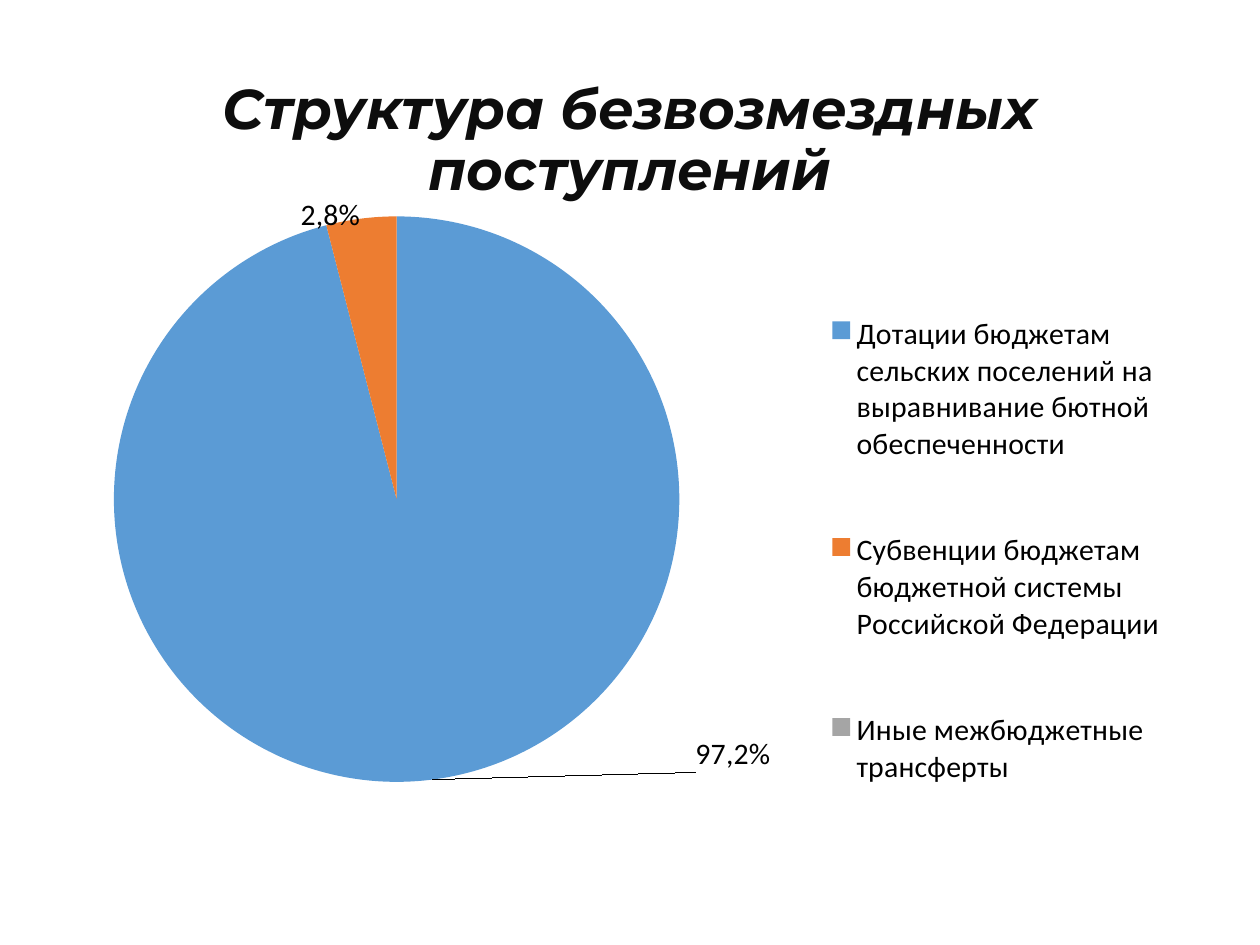
from lxml import etree
from pptx import Presentation
from pptx.chart.data import CategoryChartData
from pptx.dml.color import RGBColor
from pptx.enum.chart import XL_CHART_TYPE, XL_LABEL_POSITION, XL_LEGEND_POSITION
from pptx.enum.text import MSO_ANCHOR, PP_ALIGN
from pptx.oxml.ns import qn
from pptx.util import Inches, Pt

TITLE = "Структура безвозмездных поступлений"
# category, value, colour, label, label shift as shares of the chart
SLICES = [
    ("Дотации бюджетам сельских поселений на выравнивание бютной обеспеченности",
     96, "5B9BD5", "97,2%", (0.23, -0.07)),
    ("Субвенции бюджетам бюджетной системы Российской Федерации",
     4, "ED7D31", "2,8%", (0, 0.03)),
    ("Иные межбюджетные трансферты", 0, "A5A5A5", None, None),
]
CHART_WIDTH, CHART_HEIGHT = 9.06, 5.83
CHART_FONT_SIZE = 17
PIE_SIZE = 4.5
PIE_CENTRE = (0.3, 0.46)


def colour(hex_string):
    return RGBColor.from_string(hex_string)


def manual_layout(**settings):
    """Return a c:layout element holding the settings in the given order."""
    layout = etree.Element(qn("c:layout"))
    manual = etree.SubElement(layout, qn("c:manualLayout"))
    for name, value in settings.items():
        etree.SubElement(manual, qn(f"c:{name}")).set("val", str(value))
    return layout


def place(element, layout, index):
    for old in element.findall(qn("c:layout")):
        element.remove(old)
    element.insert(index, layout)


def add_title(slide):
    box = slide.shapes.add_textbox(Inches(0.69), Inches(0.4), Inches(8.62), Inches(1.45))
    frame = box.text_frame
    frame.word_wrap = True
    frame.vertical_anchor = MSO_ANCHOR.MIDDLE
    para = frame.paragraphs[0]
    para.alignment = PP_ALIGN.CENTER
    para.line_spacing = 0.9
    span = para.add_run()
    span.text = TITLE
    span.font.name = "Montserrat"
    span.font.size = Pt(32)
    span.font.bold = span.font.italic = True
    span.font.color.rgb = colour("0D0D0D")


def style_chart_font(font):
    font.name = "Calibri"
    font.size = Pt(CHART_FONT_SIZE)
    font.color.rgb = colour("000000")


def add_pie(slide):
    data = CategoryChartData()
    data.categories = [entry[0] for entry in SLICES]
    data.add_series("Series 1", [entry[1] for entry in SLICES])
    chart = slide.shapes.add_chart(
        XL_CHART_TYPE.PIE, Inches(0.43), Inches(1.31),
        Inches(CHART_WIDTH), Inches(CHART_HEIGHT), data).chart
    chart.has_title = False
    style_chart_font(chart.font)

    width, height = PIE_SIZE / CHART_WIDTH, PIE_SIZE / CHART_HEIGHT
    pie_layout = manual_layout(
        layoutTarget="inner", xMode="edge", yMode="edge",
        x=round(PIE_CENTRE[0] - width / 2, 2), y=round(PIE_CENTRE[1] - height / 2, 2),
        w=round(width, 2), h=round(height, 2))
    plot = chart.plots[0]
    plot.vary_by_categories = True
    place(chart.element.find(f".//{qn('c:plotArea')}"), pie_layout, 0)

    chart.has_legend = True
    legend = chart.legend
    legend.position = XL_LEGEND_POSITION.RIGHT
    legend.include_in_layout = False
    legend_layout = manual_layout(xMode="edge", yMode="edge", x=0.67, y=0.11, w=0.31, h=0.83)
    place(chart.element.find(f".//{qn('c:legend')}"), legend_layout, 1)

    series = plot.series[0]
    for index, (_, _, fill, label, shift) in enumerate(SLICES):
        point = series.points[index]
        point.format.fill.solid()
        point.format.fill.fore_color.rgb = colour(fill)
        if not label:
            continue
        span = point.data_label.text_frame.paragraphs[0].add_run()
        span.text = label
        style_chart_font(span.font)
        point.data_label.position = XL_LABEL_POSITION.OUTSIDE_END
        label_element = series.data_labels._element.findall(qn("c:dLbl"))[index]
        place(label_element, manual_layout(x=shift[0], y=shift[1]), 1)
    series.data_labels.show_value = False


def main():
    deck = Presentation()
    deck.slide_width, deck.slide_height = Inches(10), Inches(7.5)
    slide = deck.slides.add_slide(deck.slide_layouts[6])
    add_title(slide)
    add_pie(slide)
    deck.save("out.pptx")


if __name__ == "__main__":
    main()
